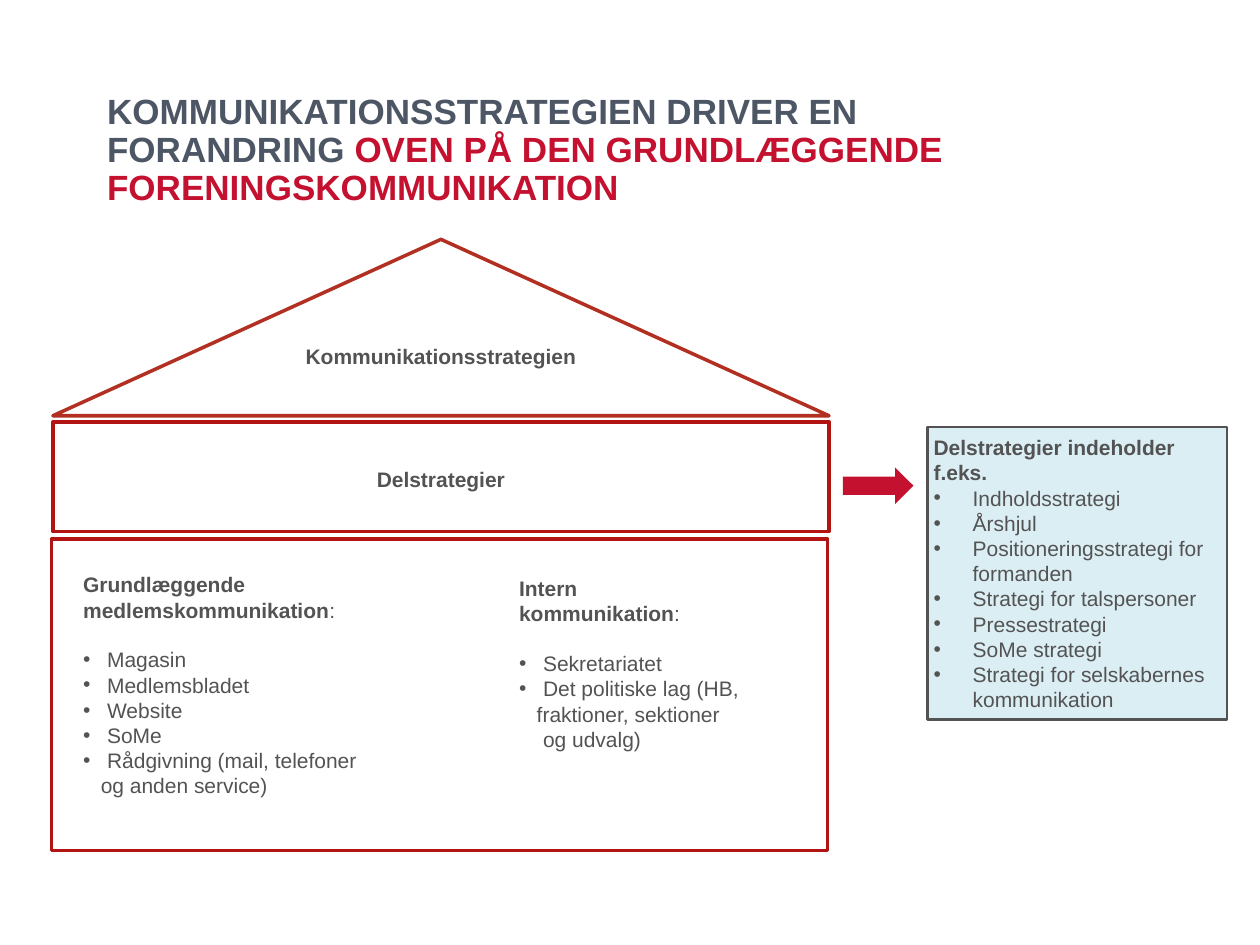
from lxml.etree import SubElement
from pptx import Presentation
from pptx.dml.color import RGBColor
from pptx.enum.shapes import MSO_SHAPE
from pptx.enum.text import MSO_ANCHOR, PP_ALIGN
from pptx.oxml.ns import qn
from pptx.util import Inches, Pt

GREY, RED, WALL, ROOF = "535353", "C41130", "B21414", "B23021"


def colour(value):
    """Turn a hex string into a colour."""
    return RGBColor.from_string(value)


def style_shape(shape, fill, line=None, width=2):
    """Give a shape a flat fill and an optional outline."""
    shape.shadow.inherit = False
    shape.fill.solid()
    shape.fill.fore_color.rgb = colour(fill)
    if line:
        shape.line.color.rgb = colour(line)
        shape.line.width = Pt(width)
    else:
        shape.line.fill.background()
    return shape


def add_block(page, kind, box, fill, line=None, width=2):
    """Add a preset shape in the given box."""
    shape = page.shapes.add_shape(kind, *map(Inches, box))
    return style_shape(shape, fill, line, width)


def set_frame(frame, margin=0, anchor=MSO_ANCHOR.TOP):
    """Set the wrapping, margins and anchor of a text frame."""
    frame.word_wrap = True
    frame.margin_left = frame.margin_right = Inches(margin)
    frame.margin_top = frame.margin_bottom = Inches(margin)
    frame.vertical_anchor = anchor
    return frame


def add_textbox(page, box, **options):
    """Add an empty wrapping text box."""
    return set_frame(page.shapes.add_textbox(*map(Inches, box)).text_frame, **options)


def format_span(span, bold=False, size=12, color=GREY):
    """Set the font of one run."""
    span.font.name = "Arial"
    span.font.size = Pt(size)
    span.font.bold = bold
    span.font.color.rgb = colour(color)


def write(frame, text, bold=False, align=PP_ALIGN.LEFT, indent=0, bullet=False, after=0):
    """Write a paragraph into a frame, using its first one while empty."""
    first = frame.paragraphs[0]
    para = frame.add_paragraph() if first.runs else first
    para.text = text
    para.alignment = align
    para.space_before = Pt(0)
    para.space_after = Pt(after)
    properties = para._p.get_or_add_pPr()
    properties.set("marL", str(Inches(indent)))
    properties.set("indent", str(Inches(-indent if bullet else 0)))
    if bullet:
        SubElement(properties, qn("a:buFont"), typeface="Arial")
        SubElement(properties, qn("a:buChar"), char="•")
    else:
        SubElement(properties, qn("a:buNone"))
    for span in para.runs:
        format_span(span, bold)
    return para


def add_label(page, box, text):
    """Add a bold centred label."""
    frame = add_textbox(page, box, anchor=MSO_ANCHOR.MIDDLE)
    write(frame, text, bold=True, align=PP_ALIGN.CENTER)


def add_title(page, box, spans):
    """Place the title and colour its parts."""
    title = page.shapes.title
    title.left, title.top, title.width, title.height = map(Inches, box)
    para = set_frame(title.text_frame).paragraphs[0]
    para.alignment = PP_ALIGN.LEFT
    para.line_spacing = 0.9
    for text, color in spans:
        span = para.add_run()
        span.text = text
        format_span(span, bold=True, size=20, color=color)


def add_roof(page, box, text):
    """Draw the triangular roof with its label."""
    left, top, width, height = box
    corners = [(left + width / 2, top), (left + width, top + height), (left, top + height)]
    points = [(Inches(x), Inches(y)) for x, y in corners]
    builder = page.shapes.build_freeform(*points[0])
    builder.add_line_segments(points[1:], close=True)
    style_shape(builder.convert_to_shape(), "FFFFFF", ROOF)
    add_label(page, (left, top + 0.83, width, 0.2), text)


def add_floor(page, box, text):
    """Draw the middle floor with its label."""
    left, top, width, height = box
    add_block(page, MSO_SHAPE.RECTANGLE, box, "FFFFFF", WALL)
    add_label(page, (left, top + 0.31, width, 0.29), text)


def add_column(page, box, heading, items, tails):
    """Write a heading, its bullets and the indented rest of the last bullet."""
    frame = add_textbox(page, box)
    para = write(frame, heading, bold=True, after=14)
    colon = para.add_run()
    colon.text = ":"
    format_span(colon)
    for item in items:
        write(frame, item, indent=0.19, bullet=True)
    for tail, indent in tails:
        write(frame, tail, indent=indent)


def add_foundation(page, box):
    """Draw the ground floor with its two columns."""
    left, top, width, height = box
    add_block(page, MSO_SHAPE.RECTANGLE, box, "FFFFFF", WALL)
    add_column(page, (left + 0.25, top + 0.26, 2.79, 2.13),
               "Grundlæggende medlemskommunikation",
               ["Magasin", "Medlemsbladet", "Website", "SoMe",
                "Rådgivning (mail, telefoner"],
               [("og anden service)", 0.14)])
    add_column(page, (left + 3.71, top + 0.29, 2.16, 1.4),
               "Intern \vkommunikation",
               ["Sekretariatet", "Det politiske lag (HB,"],
               [("fraktioner, sektioner", 0.14), ("og udvalg)", 0.19)])


def add_callout(page, box, heading, items):
    """Draw the tinted box that lists the partial strategies."""
    shape = add_block(page, MSO_SHAPE.RECTANGLE, box, "DBEEF4", GREY, 1.5)
    frame = set_frame(shape.text_frame, margin=0.05, anchor=MSO_ANCHOR.MIDDLE)
    write(frame, heading, bold=True)
    for item in items:
        write(frame, item, indent=0.31, bullet=True)


def main():
    """Build the slide and save the deck."""
    deck = Presentation()
    deck.slide_width, deck.slide_height = Inches(10), Inches(7.5)
    page = deck.slides.add_slide(deck.slide_layouts[5])
    add_title(page, (0.85, 0.75, 7.57, 0.93),
              [("KOMMUNIKATIONSSTRATEGIEN DRIVER EN FORANDRING ", "4D5665"),
               ("OVEN PÅ DEN GRUNDLÆGGENDE FORENINGSKOMMUNIKATION", RED)])
    add_foundation(page, (0.41, 4.28, 6.16, 2.47))
    add_roof(page, (0.42, 1.9, 6.16, 1.4), "Kommunikationsstrategien")
    add_floor(page, (0.42, 3.35, 6.16, 0.87), "Delstrategier")
    add_callout(page, (7.36, 3.39, 2.38, 2.32), "Delstrategier indeholder f.eks.",
                ["Indholdsstrategi", "Årshjul", "Positioneringsstrategi for formanden",
                 "Strategi for talspersoner", "Pressestrategi", "SoMe strategi",
                 "Strategi for selskabernes kommunikation"])
    add_block(page, MSO_SHAPE.RIGHT_ARROW, (6.69, 3.71, 0.56, 0.29), RED)
    deck.save("out.pptx")


if __name__ == "__main__":
    main()
